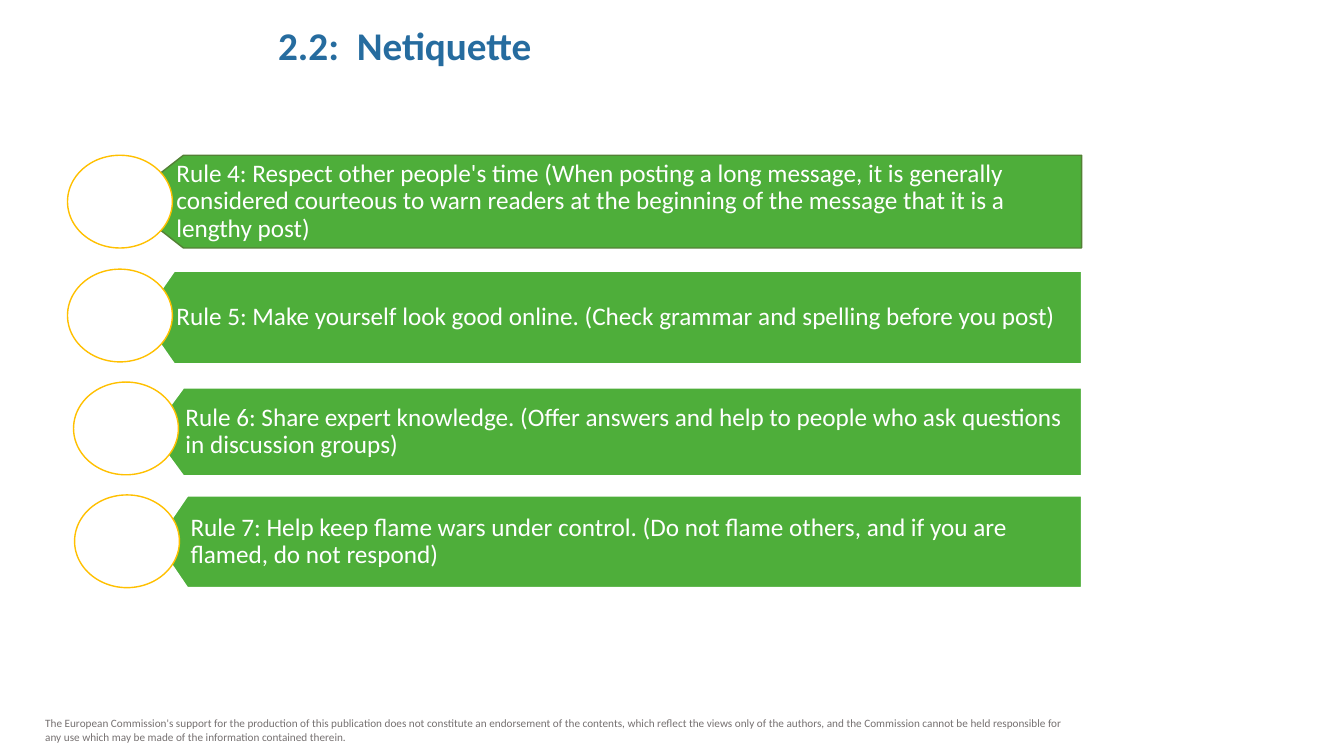
from dataclasses import dataclass

from pptx import Presentation
from pptx.dml.color import RGBColor
from pptx.enum.shapes import MSO_SHAPE
from pptx.enum.text import MSO_ANCHOR, MSO_AUTO_SIZE, PP_ALIGN
from pptx.util import Inches, Pt

ELLIPSE = MSO_SHAPE.OVAL
TOP, MIDDLE = MSO_ANCHOR.TOP, MSO_ANCHOR.MIDDLE
LEFT, JUSTIFY = PP_ALIGN.LEFT, PP_ALIGN.JUSTIFY
NO_FIT = MSO_AUTO_SIZE.NONE
TITLE_ONLY = 5

# Grid cells are a tenth of an inch: 133.33 columns by 75 rows
CELL = Inches(0.1)
COLS, ROWS = 133.33, 75
GREEN, WHITE, AMBER = "4EAE3A", "FFFFFF", "FFC000"
BANNER_RIGHT = 107.3
CIRCLE_W, CIRCLE_H = 10.4, 9.2


@dataclass
class Rule:
    text: str
    tip: float        # column of the banner's point
    shoulder: float   # column where the point meets the body
    top: float
    height: float
    circle_left: float
    circle_top: float
    inset: float = 3.4
    outline: str = WHITE


RULES = [
    Rule("Rule 4: Respect other people's time (When posting a long message, "
         "it is generally considered courteous to warn readers at the beginning "
         "of the message that it is a lengthy post)",
         12.3, 18.2, 15.4, 9.2, 6.7, 15.4, inset=5.2, outline="538035"),
    Rule("Rule 5: Make yourself look good online. "
         "(Check grammar and spelling before you post)",
         14.1, 17.3, 26.9, 9.2, 6.7, 26.7),
    Rule("Rule 6: Share expert knowledge. (Offer answers and help to people "
         "who ask questions in discussion groups)",
         15, 18.2, 38.5, 8.7, 7.3, 37.9),
    Rule("Rule 7: Help keep flame wars under control. (Do not flame others, "
         "and if you are flamed, do not respond)",
         15.5, 18.6, 49.2, 9.1, 7.4, 49.1),
]


def grid(cells: float) -> int:
    return round(cells * CELL)


def color(value: str) -> RGBColor:
    return RGBColor.from_string(value)


def paint(s, fill: str, line: str) -> None:
    s.shadow.inherit = False
    s.fill.solid()
    s.fill.fore_color.rgb = color(fill)
    s.line.color.rgb = color(line)
    s.line.width = Pt(1)


def write(s, text: str, size: float, ink: str, anchor, bold: bool = False,
          align=LEFT, spacing: float = 1.0, inset: float = 1) -> None:
    tf = s.text_frame
    frame = {"word_wrap": True, "auto_size": NO_FIT, "vertical_anchor": anchor,
             "margin_left": grid(inset), "margin_right": grid(0.9),
             "margin_top": grid(0.5), "margin_bottom": grid(0.5)}
    for name, value in frame.items():
        setattr(tf, name, value)
    p = tf.paragraphs[0]
    for name, value in {"alignment": align, "line_spacing": spacing}.items():
        setattr(p, name, value)
    r = p.add_run()
    r.text = text
    for name, value in {"name": "Calibri", "size": Pt(size), "bold": bold}.items():
        setattr(r.font, name, value)
    r.font.color.rgb = color(ink)


def draw_rule(shapes, rule: Rule) -> None:
    # Banner with a point on its left
    bottom = rule.top + rule.height
    outline = [(rule.shoulder, bottom), (rule.tip, rule.top + rule.height / 2),
               (rule.shoulder, rule.top), (BANNER_RIGHT, rule.top)]
    builder = shapes.build_freeform(grid(BANNER_RIGHT), grid(bottom))
    builder.add_line_segments([(grid(x), grid(y)) for x, y in outline], close=True)
    banner = builder.convert_to_shape()
    paint(banner, GREEN, rule.outline)
    write(banner, rule.text, 18, WHITE, MIDDLE, spacing=0.9, inset=rule.inset)

    # Circle over the point
    circle = shapes.add_shape(ELLIPSE, grid(rule.circle_left), grid(rule.circle_top),
                              grid(CIRCLE_W), grid(CIRCLE_H))
    paint(circle, WHITE, AMBER)


def main() -> None:
    prs = Presentation()
    prs.slide_width, prs.slide_height = grid(COLS), grid(ROWS)
    slide = prs.slides.add_slide(prs.slide_layouts[TITLE_ONLY])
    shapes = slide.shapes

    # Title
    title = shapes.title
    place = {"left": 26.6, "top": 0.9, "width": 40.1, "height": 6.5}
    for name, value in place.items():
        setattr(title, name, grid(value))
    write(title, "2.2:  Netiquette", 28, "266C9F", TOP, bold=True,
          align=JUSTIFY, spacing=1.15)

    # Rules
    for rule in RULES:
        draw_rule(shapes, rule)

    # Disclaimer
    note = shapes.add_textbox(grid(3.5), grid(70.6), grid(104.6), grid(3.7))
    write(note, "The European Commission's support for the production of this "
          "publication does not constitute an endorsement of the contents, which "
          "reflect the views only of the authors, and the Commission cannot be held "
          "responsible for any use which may be made of the information contained "
          "therein.", 8, "767171", TOP)

    prs.save("out.pptx")


if __name__ == "__main__":
    main()
